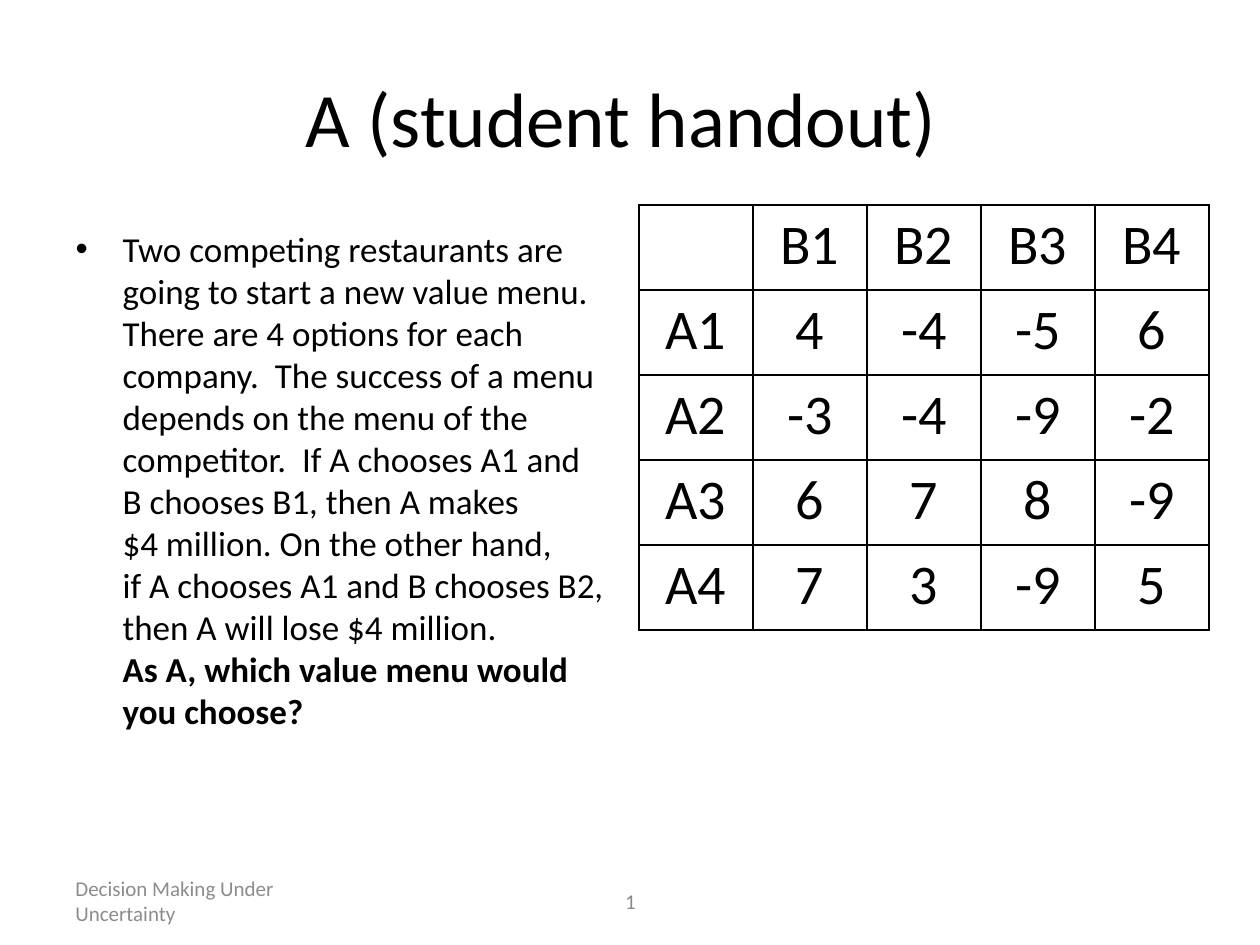
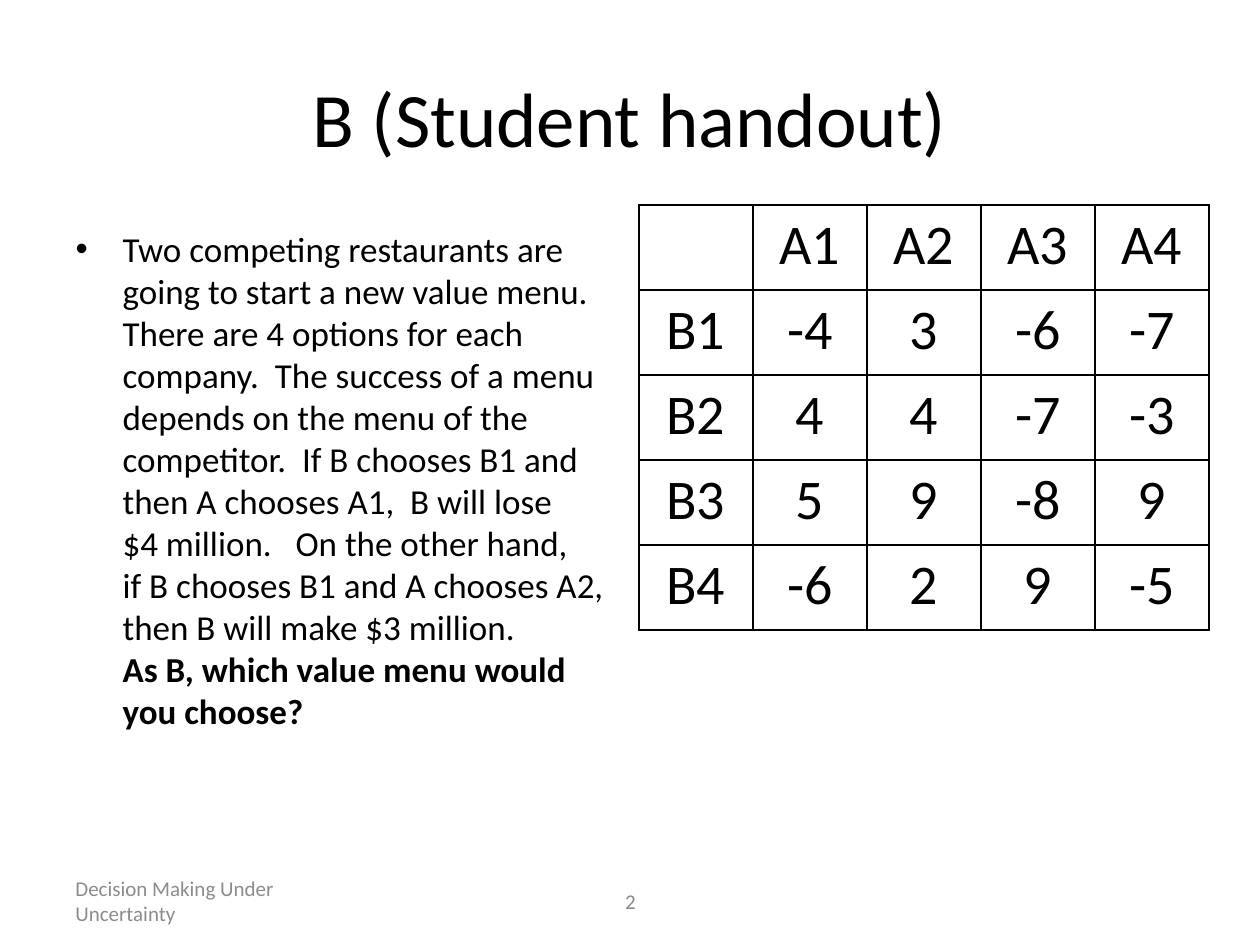
from pptx import Presentation
from pptx.dml.color import RGBColor
from pptx.enum.text import MSO_ANCHOR as Anchor, MSO_AUTO_SIZE as AutoSize, PP_ALIGN as Align
from pptx.oxml import parse_xml
from pptx.oxml.ns import nsdecls
from pptx.util import Pt

PX = 914400 / 126
BLACK = RGBColor(0x00, 0x00, 0x00)
FOOTER_GRAY = RGBColor(0x8C, 0x8C, 0x8C)
NUMBER_GRAY = RGBColor(0x89, 0x89, 0x89)
FONT = "Calibri"
FOOTER = "Decision Making Under Uncertainty"

INTRO = (
    "Two competing restaurants are going to start a new value menu.  "
    "There are 4 options for each company.  "
    "The success of a menu depends on the menu of the competitor.  "
)
CASE_A = (
    "If A chooses A1 and B chooses B1, then A makes \n"
    "$4 million. On the other hand, \n"
    "if A chooses A1 and B chooses B2, then A will lose $4 million.  \n"
)
CASE_B = (
    "If B chooses B1 and then A chooses A1,  B will lose \n"
    "$4 million.   On the other hand, \n"
    "if B chooses B1 and A chooses A2, then B will make $3 million.  \n"
)
PAYOFFS_A = [
    [4, -4, -5, 6],
    [-3, -4, -9, -2],
    [6, 7, 8, -9],
    [7, 3, -9, 5],
]
# What one restaurant gains, the other loses.
PAYOFFS_B = [[-value for value in column] for column in zip(*PAYOFFS_A)]


def emu(px):
    return round(px * PX)


def write(p, text, size=20, color=BLACK, bold=False, align=Align.LEFT):
    """Append text to a paragraph, with a line break at each newline."""
    p.alignment = align
    p.space_before = Pt(0)
    for i, line in enumerate(text.split("\n")):
        if i:
            p.add_line_break()
        if line:
            r = p.add_run()
            r.text = line
            r.font.name, r.font.size, r.font.bold = FONT, Pt(size), bold
            r.font.color.rgb = color


def add_borders(cell):
    tcPr = cell._tc.get_or_add_tcPr()
    for side in "LRTB":
        tcPr.append(parse_xml(
            f'<a:ln{side} {nsdecls("a")} w="{Pt(1)}"><a:solidFill>'
            f'<a:srgbClr val="{BLACK}"/></a:solidFill></a:ln{side}>'))


class Handout:
    def __init__(self):
        self.prs = Presentation()
        self.prs.slide_width, self.prs.slide_height = emu(1260), emu(945)
        self.slide = None

    def new_slide(self):
        self.slide = self.prs.slides.add_slide(self.prs.slide_layouts[1])
        self.label(FOOTER, 63, 294, FOOTER_GRAY)
        self.label(str(len(self.prs.slides)), 431, 399, NUMBER_GRAY, Align.CENTER)

    def place(self, sp, x, y, w, h, anchor):
        sp.left, sp.top, sp.width, sp.height = map(emu, (x, y, w, h))
        tf = sp.text_frame
        tf.word_wrap, tf.auto_size, tf.vertical_anchor = True, AutoSize.NONE, anchor
        return tf.paragraphs[0]

    def label(self, text, x, w, color, align=Align.LEFT):
        sp = self.slide.shapes.add_textbox(0, 0, 0, 0)
        p = self.place(sp, x, 876, w, 50, Anchor.MIDDLE)
        write(p, text, size=12, color=color, align=align)

    def title(self, text):
        p = self.place(self.slide.shapes.title, 63, 38, 1134, 157, Anchor.MIDDLE)
        write(p, text, size=44, align=Align.CENTER)

    def body(self, text, question):
        p = self.place(self.slide.placeholders[1], 63, 221, 557, 624, Anchor.TOP)
        pPr = p._p.get_or_add_pPr()
        pPr.set("marL", str(emu(47)))
        pPr.set("indent", str(-emu(47)))
        write(p, text)
        write(p, question, bold=True)

    def table(self, rows, x=639, y=205, col_w=114, row_h=85):
        n_rows, n_cols = len(rows), len(rows[0])
        table = self.slide.shapes.add_table(
            n_rows, n_cols, emu(x), emu(y), emu(col_w * n_cols), emu(row_h * n_rows)).table
        table.first_row = table.horz_banding = False
        for i, row in enumerate(rows):
            for j, value in enumerate(row):
                cell = table.cell(i, j)
                add_borders(cell)
                cell.fill.background()
                write(cell.text_frame.paragraphs[0], str(value), size=32, align=Align.CENTER)


def payoff_rows(player, rival, payoffs):
    header = [""] + [f"{rival}{n}" for n in range(1, len(payoffs[0]) + 1)]
    return [header] + [[f"{player}{n}", *row] for n, row in enumerate(payoffs, 1)]


def main():
    handout = Handout()
    for player, rival, title, case, payoffs in (
        ("A", "B", "A (student handout) ", CASE_A, PAYOFFS_A),
        ("B", "A", "B (Student handout)", CASE_B, PAYOFFS_B),
    ):
        handout.new_slide()
        handout.title(title)
        handout.body(INTRO + case, f"As {player}, which value menu would you choose?")
        handout.table(payoff_rows(player, rival, payoffs))
    handout.prs.save("out.pptx")


if __name__ == "__main__":
    main()
